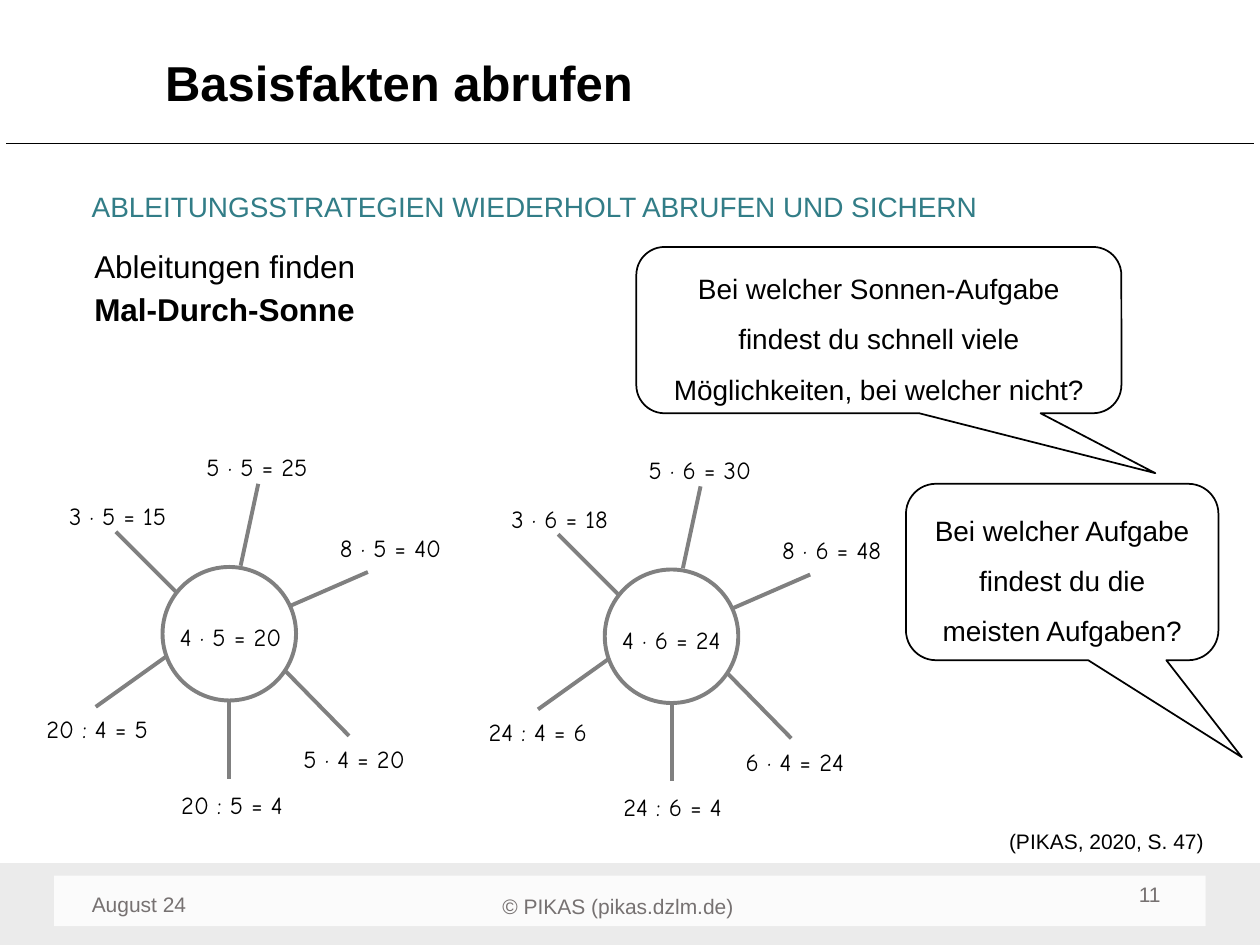
from pptx import Presentation
from pptx.dml.color import RGBColor
from pptx.enum.shapes import MSO_CONNECTOR as CONN, MSO_SHAPE as SHAPE
from pptx.enum.text import MSO_ANCHOR as ANCHOR, PP_ALIGN as ALIGN
from pptx.oxml.ns import qn
from pptx.util import Inches, Pt
from lxml import etree

COLORS = {"black": "000000", "band": "D9D9D9", "white": "FFFFFF",
          "footer": "767171", "teal": "327D87", "sun": "808080"}


def write(shape, lines, size, color="black", align=ALIGN.LEFT, spacing=1.0,
          anchor=ANCHOR.TOP, font="Arial", bold=(), wrap=True):
    tf = shape.text_frame
    tf.word_wrap = wrap
    tf.vertical_anchor = anchor
    for i, line in enumerate(lines):
        p = tf.paragraphs[0] if i == 0 else tf.add_paragraph()
        p.alignment, p.line_spacing = align, spacing
        p.space_before = Pt(3 if i else 0)
        r = p.add_run()
        r.text = line
        style = {"name": font, "size": Pt(size), "bold": i in bold}
        for key, value in style.items():
            setattr(r.font, key, value)
        r.font.color.rgb = RGBColor.from_string(COLORS[color])


def connect(shapes, x1, y1, x2, y2, color, width):
    line = shapes.add_connector(CONN.STRAIGHT, Inches(x1), Inches(y1), Inches(x2), Inches(y2))
    line.line.color.rgb = RGBColor.from_string(COLORS[color])
    line.line.width = Pt(width)
    etree.SubElement(line._element.spPr, qn("a:effectLst"))


prs = Presentation()
prs.slide_width, prs.slide_height = Inches(10), Inches(7.5)
s = prs.slides.add_slide(prs.slide_layouts[5])

# Title with rule
title = s.shapes.title
title.left, title.top, title.width, title.height = map(Inches, (1.21, 0.42, 7.66, 0.66))
write(title, ["Basisfakten abrufen"], 28, spacing=0.9, bold=(0,))
connect(s.shapes, 0.05, 1.14, 9.95, 1.14, "black", 1)

# Translucent footer bands
for box, color, alpha in [((0, 6.85, 10, 0.65), "band", 50),
                          ((0.43, 6.95, 9.14, 0.4), "white", 80)]:
    band = s.shapes.add_shape(SHAPE.RECTANGLE, *map(Inches, box))
    band.shadow.inherit = False
    band.fill.solid()
    band.fill.fore_color.rgb = RGBColor.from_string(COLORS[color])
    band.line.fill.background()
    srgb = band._element.spPr.find(".//" + qn("a:srgbClr"))
    etree.SubElement(srgb, qn("a:alpha"), val=str(alpha * 1000))

# Footer, heading, body and citation
footer = {"size": 12, "color": "footer"}
texts = [
    ((0.63, 6.93, 2.25, 0.43), ["August 24"], {**footer, "spacing": 1.5}),
    ((3.78, 6.93, 2.25, 0.43), ["© PIKAS (pikas.dzlm.de)"],
     {**footer, "spacing": 1.5, "align": ALIGN.CENTER, "anchor": ANCHOR.MIDDLE}),
    ((7.06, 6.95, 2.25, 0.4), ["11"], {**footer, "align": ALIGN.RIGHT}),
    ((0.63, 1.32, 8.96, 0.49), ["ABLEITUNGSSTRATEGIEN WIEDERHOLT ABRUFEN UND SICHERN"],
     {"size": 16, "color": "teal", "spacing": 1.5}),
    ((0.65, 1.91, 4, 0.8), ["Ableitungen finden", "Mal-Durch-Sonne"],
     {"size": 18, "bold": (1,)}),
    ((7.91, 6.53, 1.79, 0.3), ["(PIKAS, 2020, S. 47)"], {"size": 12}),
]
for box, lines, style in texts:
    write(s.shapes.add_textbox(*map(Inches, box)), lines, **style)

# Speech bubbles
bubbles = [
    ((5.05, 1.96, 3.85, 1.32), (0.57, 0.86, 0.17),
     "Bei welcher Sonnen-Aufgabe findest du schnell viele Möglichkeiten, bei welcher nicht?"),
    ((7.19, 3.84, 2.48, 1.4), (0.575, 1.05, 0.17),
     "Bei welcher Aufgabe findest du die meisten Aufgaben?"),
]
for box, adjustments, text in bubbles:
    bubble = s.shapes.add_shape(SHAPE.ROUNDED_RECTANGULAR_CALLOUT, *map(Inches, box))
    for i, value in enumerate(adjustments):
        bubble.adjustments[i] = value
    bubble.shadow.inherit = False
    bubble.fill.background()
    bubble.line.color.rgb = RGBColor.from_string(COLORS["black"])
    bubble.line.width = Pt(1)
    write(bubble, [text], 16, align=ALIGN.CENTER, spacing=1.5, anchor=ANCHOR.MIDDLE)

# Suns: task in the middle, one derived task per ray
LABELS = [(1.54, 3.54), (2.6, 4.18), (2.31, 5.86), (1.34, 6.22),
          (0.27, 5.62), (0.45, 3.93), (1.33, 4.89)]
RAYS = [(2.05, 3.84, 1.91, 4.49), (2.92, 4.54, 2.3, 4.81), (1.82, 5.56, 1.82, 6.18),
        (2.77, 5.84, 2.27, 5.33), (1.32, 5.21, 0.76, 5.61), (0.92, 4.22, 1.4, 4.7)]
suns = [
    (0, 0, ["5 · 5 = 25", "8 · 5 = 40", "5 · 4 = 20", "20 : 5 = 4",
            "20 : 4 = 5", "3 · 5 = 15", "4 · 5 = 20"]),
    (3.51, 0.02, ["5 · 6 = 30", "8 · 6 = 48", "6 · 4 = 24", "24 : 6 = 4",
                  "24 : 4 = 6", "3 · 6 = 18", "4 · 6 = 24"]),
]
for dx, dy, tasks in suns:
    sun = s.shapes.add_group_shape().shapes
    disc = sun.add_shape(SHAPE.OVAL, Inches(1.29 + dx), Inches(4.5 + dy),
                         Inches(1.06), Inches(1.06))
    disc.shadow.inherit = False
    disc.fill.background()
    disc.line.color.rgb = RGBColor.from_string(COLORS["sun"])
    disc.line.width = Pt(2.25)
    for x1, y1, x2, y2 in RAYS:
        connect(sun, x1 + dx, y1 + dy, x2 + dx, y2 + dy, "sun", 2.25)
    for (x, y), task in zip(LABELS, tasks):
        label = sun.add_textbox(Inches(x + dx), Inches(y + dy), Inches(1.07), Inches(0.34))
        write(label, [task], 14, font="Comic Neue", wrap=False)

prs.save("out.pptx")
